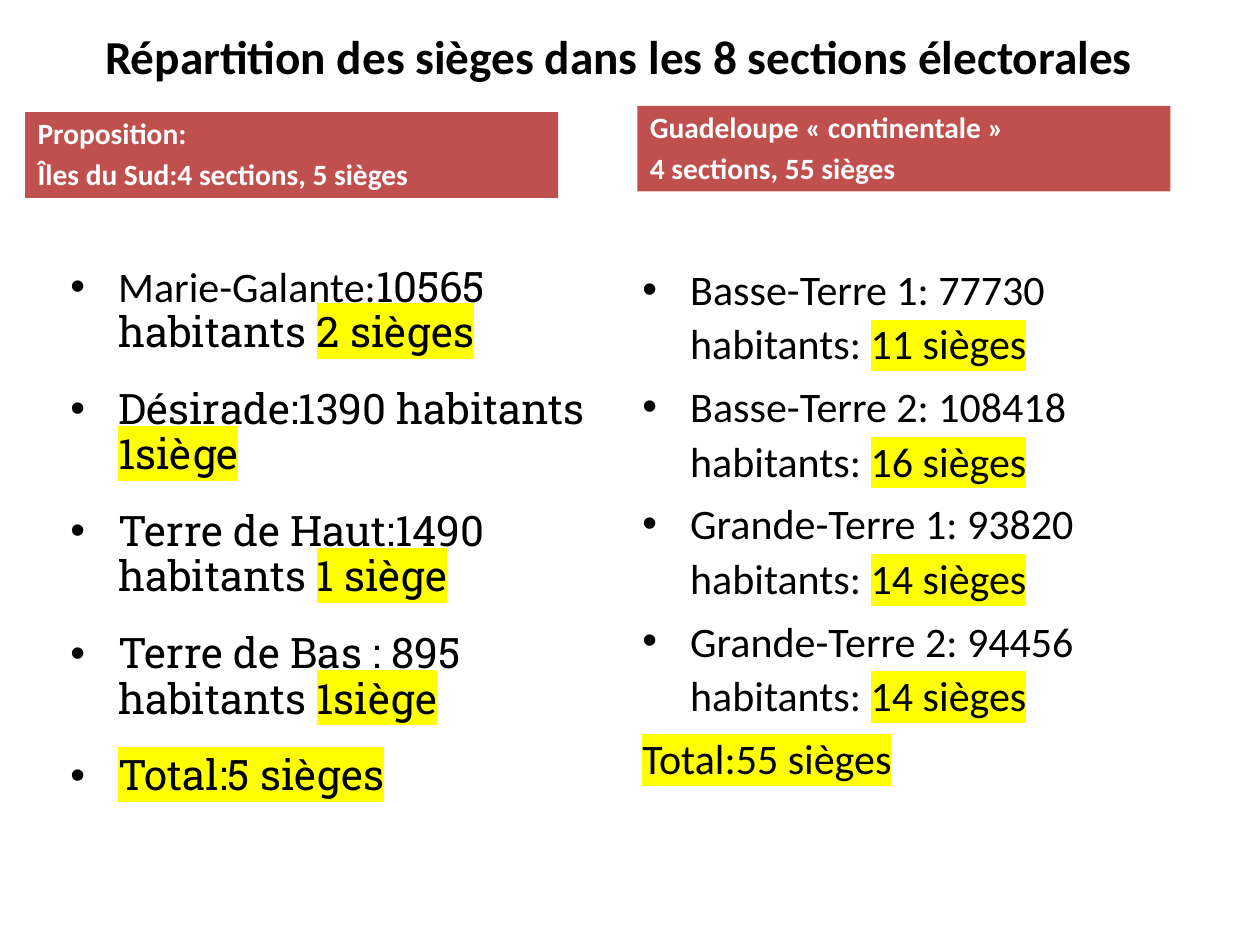
import pptx
import pptx.util
import pptx.dml.color
import pptx.enum.shapes
import pptx.enum.text
import pptx.oxml.ns
import lxml.etree

PX = 9144
ANCHOR = pptx.enum.text.MSO_ANCHOR
ALIGN = pptx.enum.text.PP_ALIGN
YELLOW = "FFFF00"


def px(n):
    return pptx.util.Emu(n * PX)


def rgb(value):
    return pptx.dml.color.RGBColor.from_string(value)


def apply(obj, formats):
    for name, value in formats.items():
        setattr(obj, name, value)


def place(sp, box):
    apply(sp, dict(zip(("left", "top", "width", "height"), map(px, box))))


def add_run(p, text, size, font="Calibri", color="000000", bold=False, highlight=None):
    r = p.add_run()
    r.text = text
    apply(r.font, {"size": pptx.util.Pt(size), "name": font, "bold": bold})
    r.font.color.rgb = rgb(color)
    if highlight:
        fill = r.font._element.find(pptx.oxml.ns.qn("a:solidFill"))
        mark = lxml.etree.Element(pptx.oxml.ns.qn("a:highlight"))
        lxml.etree.SubElement(mark, pptx.oxml.ns.qn("a:srgbClr"), val=highlight)
        fill.addnext(mark)


def add_bullet(p):
    pPr = p._p.get_or_add_pPr()
    pPr.set("marL", str(px(38)))
    pPr.set("indent", str(px(-38)))
    font = lxml.etree.SubElement(pPr, pptx.oxml.ns.qn("a:buFont"))
    font.set("typeface", "Arial")
    lxml.etree.SubElement(pPr, pptx.oxml.ns.qn("a:buChar")).set("char", "•")


def paragraphs(tf, items):
    for i, item in enumerate(items):
        yield i, (tf.add_paragraph() if i else tf.paragraphs[0]), item


def add_title(s, box, text):
    sp = s.shapes.title
    place(sp, box)
    tf = sp.text_frame
    apply(tf, {"word_wrap": True, "vertical_anchor": ANCHOR.MIDDLE,
               "auto_size": pptx.enum.text.MSO_AUTO_SIZE.NONE})
    p = tf.paragraphs[0]
    p.alignment = ALIGN.CENTER
    add_run(p, text, 27, bold=True)


def add_header(s, box, lines):
    sp = s.shapes.add_shape(pptx.enum.shapes.MSO_SHAPE.RECTANGLE, *map(px, box))
    sp.shadow.inherit = False
    sp.fill.solid()
    sp.fill.fore_color.rgb = rgb("C0504D")
    sp.line.fill.background()
    tf = sp.text_frame
    apply(tf, {"word_wrap": True, "vertical_anchor": ANCHOR.BOTTOM})
    for i, p, line in paragraphs(tf, lines):
        p.alignment = ALIGN.LEFT
        if i:
            p.space_before = pptx.util.Pt(3.4)
        add_run(p, line, 16.8, color="FFFFFF", bold=True)


def add_sections(s, box, sections, font, spacing, before, after, total_bullet):
    tf = s.shapes.add_textbox(*map(px, box)).text_frame
    tf.word_wrap = True
    for i, p, (name, people, seats) in paragraphs(tf, sections):
        apply(p, {"line_spacing": spacing, "space_after": pptx.util.Pt(after),
                  "space_before": pptx.util.Pt(before if i else 0)})
        if people or total_bullet:
            add_bullet(p)
        if name:
            add_run(p, name, 24, "Calibri" if i == 0 else font)
        if people:
            add_run(p, people, 24, font)
        add_run(p, seats, 24, font, highlight=YELLOW)


def main():
    prs = pptx.Presentation()
    apply(prs, {"slide_width": px(1000), "slide_height": px(750)})
    s = prs.slides.add_slide(prs.slide_layouts.get_by_name("Title Only"))
    add_title(s, (60, 10, 862, 68), "Répartition des sièges dans les 8 sections électorales")
    add_header(s, (20, 89, 423, 68), ["Proposition:", "Îles du Sud:4 sections, 5 sièges"])
    add_header(s, (506, 84, 423, 68), ["Guadeloupe « continentale »", "4 sections, 55 sièges"])
    mainland = [
        ("Basse-Terre 1: ", "77730 habitants: ", "11 sièges"),
        ("Basse-Terre 2: ", "108418 habitants: ", "16 sièges"),
        ("Grande-Terre 1: ", "93820 habitants: ", "14 sièges"),
        ("Grande-Terre 2: ", "94456 habitants: ", "14 sièges"),
        ("", "", "Total:55 sièges"),
    ]
    islands = [
        ("Marie-Galante:", "10565 habitants ", "2 sièges"),
        ("Désirade:", "1390 habitants ", "1siège"),
        ("Terre de Haut:", "1490 habitants ", "1 siège"),
        ("Terre de Bas : ", "895 habitants ", "1siège"),
        ("", "", "Total:5 sièges"),
    ]
    add_sections(s, (500, 201, 470, 455), mainland, "Calibri", 1.08, 4.8, 0, False)
    add_sections(s, (46, 206, 454, 474), islands, "Roboto Slab", 0.9, 9, 9, True)
    prs.save("out.pptx")


if __name__ == "__main__":
    main()
